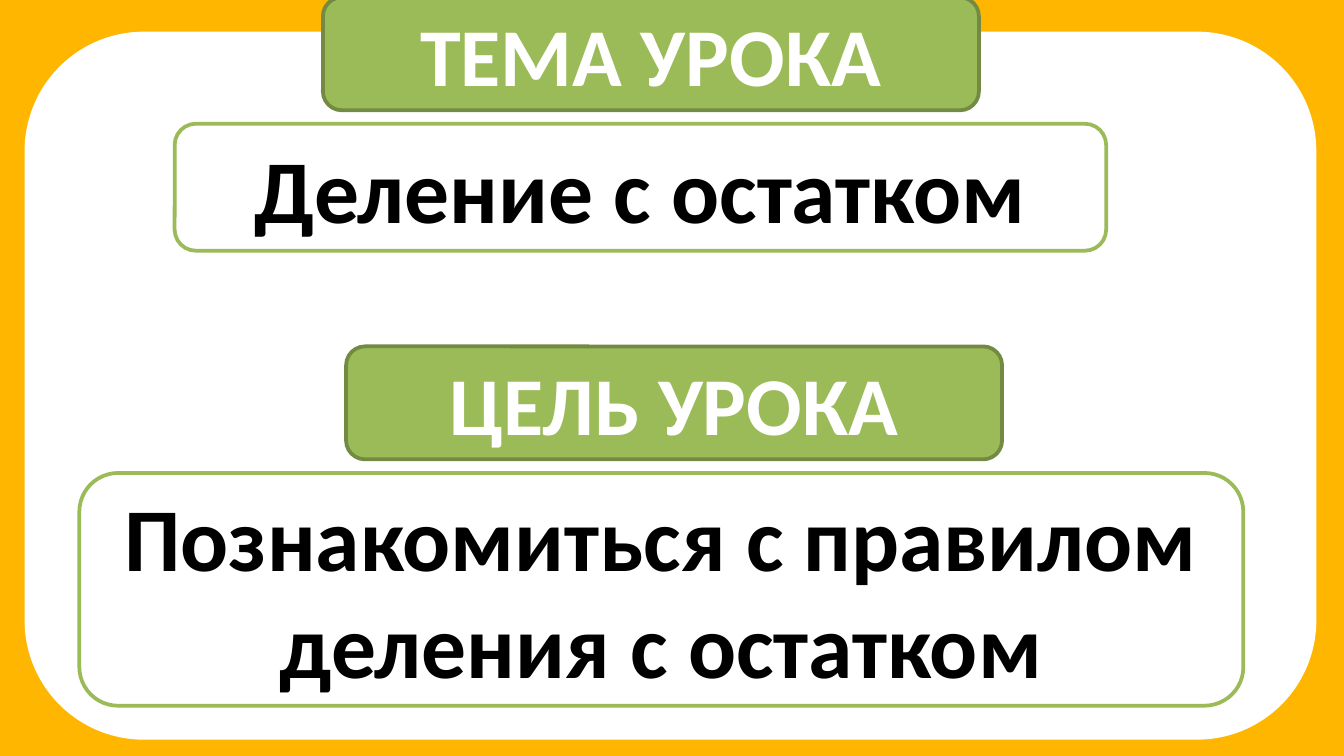
from pptx import Presentation
from pptx.dml.color import RGBColor
from pptx.enum.shapes import MSO_SHAPE
from pptx.enum.text import MSO_ANCHOR, PP_ALIGN
from pptx.util import Pt


def rgb(value):
    return RGBColor.from_string(value)


def add_panel(s, left, top, width, height, fill, line):
    sp = s.shapes.add_shape(MSO_SHAPE.ROUNDED_RECTANGLE, Pt(left), Pt(top), Pt(width), Pt(height))
    sp.shadow.inherit = False
    sp.fill.solid()
    sp.fill.fore_color.rgb = rgb(fill)
    sp.line.color.rgb = rgb(line)
    sp.line.width = Pt(2)
    return sp


prs = Presentation()
prs.slide_width = Pt(720)
prs.slide_height = Pt(405)
s = prs.slides.add_slide(prs.slide_layouts[6])
s.background.fill.solid()
s.background.fill.fore_color.rgb = rgb("FFB601")

add_panel(s, 14.2, 18, 690, 377.3, "FFFFFF", "FFFFFF")

heading = ("9BBB59", "738A42", "FFFFFF", 44)
answer = ("FFFFFF", "9BBB59", "000000", 48)
panels = [
    ("ТЕМА УРОКА", 173, -1.4, 351.4, 60.5, heading),
    ("Деление с остатком", 93.6, 66.3, 499, 68, answer),
    ("ЦЕЛЬ УРОКА", 185.4, 185.6, 351.4, 60.5, heading),
    ("Познакомиться с правилом деления с остатком", 42.5, 253.4, 623.6, 124.7, answer),
]
for text, left, top, width, height, (fill, line, color, size) in panels:
    sp = add_panel(s, left, top, width, height, fill, line)
    tf = sp.text_frame
    tf.word_wrap = True
    tf.vertical_anchor = MSO_ANCHOR.MIDDLE
    p = tf.paragraphs[0]
    p.text = text
    p.alignment = PP_ALIGN.CENTER
    p.font.name = "Calibri"
    p.font.size = Pt(size)
    p.font.bold = True
    p.font.color.rgb = rgb(color)

prs.save("out.pptx")
